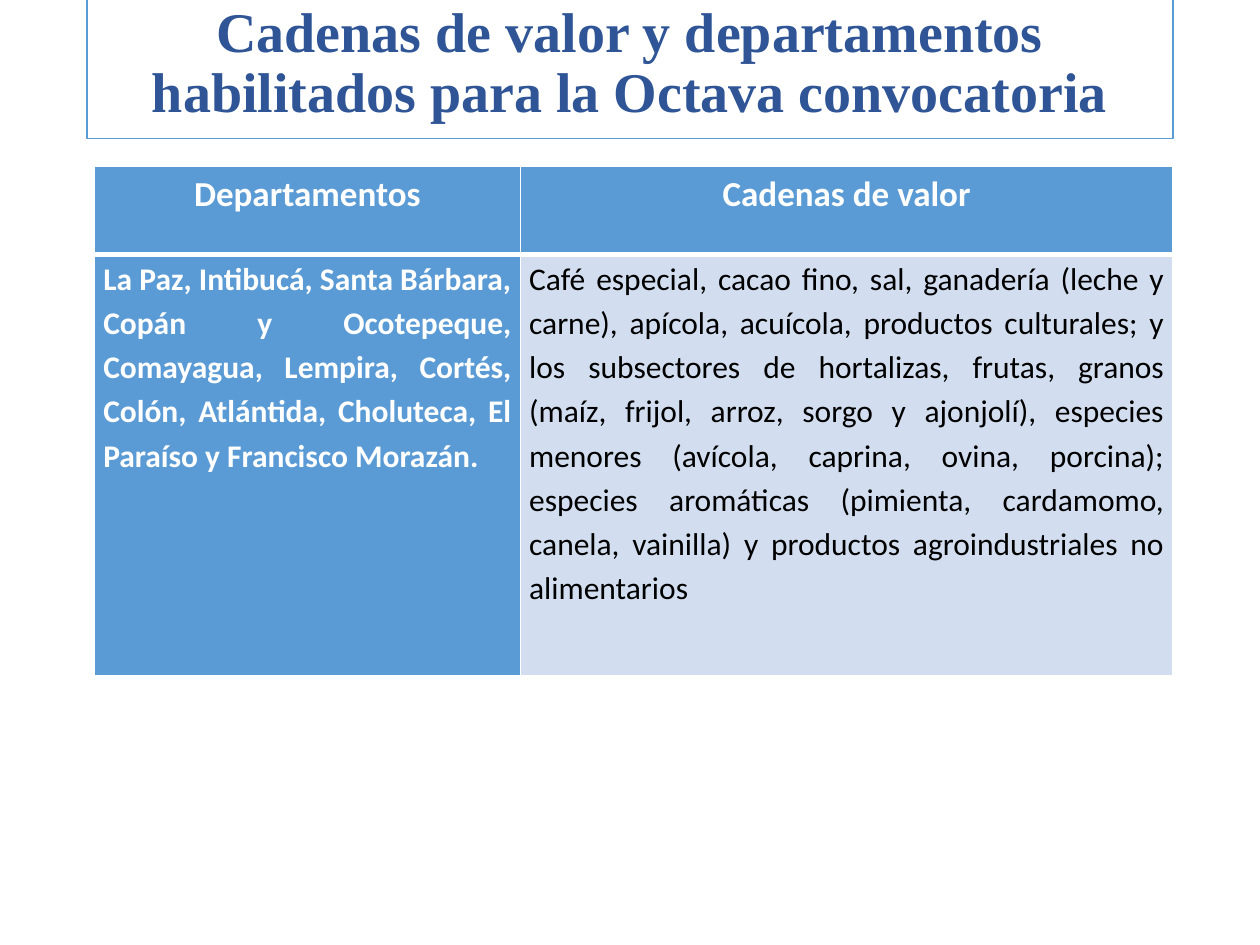
"""Build the slide of value chains and departments eligible for the eighth call."""
from lxml import etree
from pptx import Presentation, util as u
from pptx.dml.color import RGBColor
from pptx.enum import text
from pptx.oxml import ns

BLUE, PALE, WHITE, BLACK, NAVY = "5B9BD5", "D2DEEF", "FFFFFF", "000000", "2F5597"


def paint(color_format, color):
    color_format.rgb = RGBColor.from_string(color)


def add_border(cell, side, points):
    properties = cell._tc.get_or_add_tcPr()
    line = etree.SubElement(properties, ns.qn(f"a:{side}"), w=str(u.Pt(points)))
    fill = etree.SubElement(line, ns.qn("a:solidFill"))
    etree.SubElement(fill, ns.qn("a:srgbClr"), val=WHITE)


presentation = Presentation()
presentation.slide_width, presentation.slide_height = u.Inches(10), u.Inches(7.5)
slide = presentation.slides.add_slide(presentation.slide_layouts[5])

title = slide.shapes.title
title.left, title.top = u.Inches(0.69), u.Inches(-0.08)
title.width, title.height = u.Inches(8.62), u.Inches(1.18)
geometry = etree.SubElement(title._element.spPr, ns.qn("a:prstGeom"), prst="roundRect")
etree.SubElement(geometry, ns.qn("a:avLst"))
title.fill.solid()
paint(title.fill.fore_color, WHITE)
paint(title.line.color, BLUE)
title.line.width = u.Pt(1)
frame = title.text_frame
frame.text = "Cadenas de valor y departamentos habilitados para la Octava convocatoria"
frame.word_wrap = True
frame.auto_size = text.MSO_AUTO_SIZE.SHAPE_TO_FIT_TEXT
frame.vertical_anchor = text.MSO_ANCHOR.MIDDLE
paragraph = frame.paragraphs[0]
paragraph.alignment, paragraph.line_spacing = text.PP_ALIGN.CENTER, 0.9
paragraph.font.name, paragraph.font.size, paragraph.font.bold = "Times New Roman", u.Pt(32), True
paint(paragraph.font.color, NAVY)

rows = [
    ["Departamentos", "Cadenas de valor"],
    [
        "La Paz, Intibucá, Santa Bárbara, Copán y Ocotepeque, Comayagua, Lempira, "
        "Cortés, Colón, Atlántida, Choluteca, El Paraíso y Francisco Morazán.",
        "Café especial, cacao fino, sal, ganadería (leche y carne), apícola, acuícola, "
        "productos culturales; y los subsectores de hortalizas, frutas, granos (maíz, "
        "frijol, arroz, sorgo y ajonjolí), especies menores (avícola, caprina, ovina, "
        "porcina); especies aromáticas (pimienta, cardamomo, canela, vainilla) y "
        "productos agroindustriales no alimentarios",
    ],
]
table = slide.shapes.add_table(
    2, 2, u.Inches(0.75), u.Inches(1.32), u.Inches(8.56), u.Inches(4.03)
).table
for column, width in zip(table.columns, (3.38, 5.18)):
    column.width = u.Inches(width)
for row, height in zip(table.rows, (0.7, 3.34)):
    row.height = u.Inches(height)

for row_index, row in enumerate(rows):
    for column_index, wording in enumerate(row):
        header = row_index == 0
        plain = not header and column_index == 1
        cell = table.cell(row_index, column_index)
        cell.text = wording
        cell.margin_left = cell.margin_right = u.Inches(0.07)
        cell.margin_top = cell.margin_bottom = 0
        for side in ("lnL", "lnR", "lnT", "lnB"):
            heavy = side == ("lnB" if header else "lnT")
            add_border(cell, side, 3 if heavy else 1)
        cell.fill.solid()
        paint(cell.fill.fore_color, PALE if plain else BLUE)
        paragraph = cell.text_frame.paragraphs[0]
        paragraph.alignment = text.PP_ALIGN.CENTER if header else text.PP_ALIGN.JUSTIFY
        paragraph.line_spacing, paragraph.space_after = 1.15, u.Pt(10)
        paragraph.font.name, paragraph.font.bold = "Calibri", not plain
        paragraph.font.size = u.Pt(20 if header else 18)
        paint(paragraph.font.color, BLACK if plain else WHITE)

presentation.save("out.pptx")
